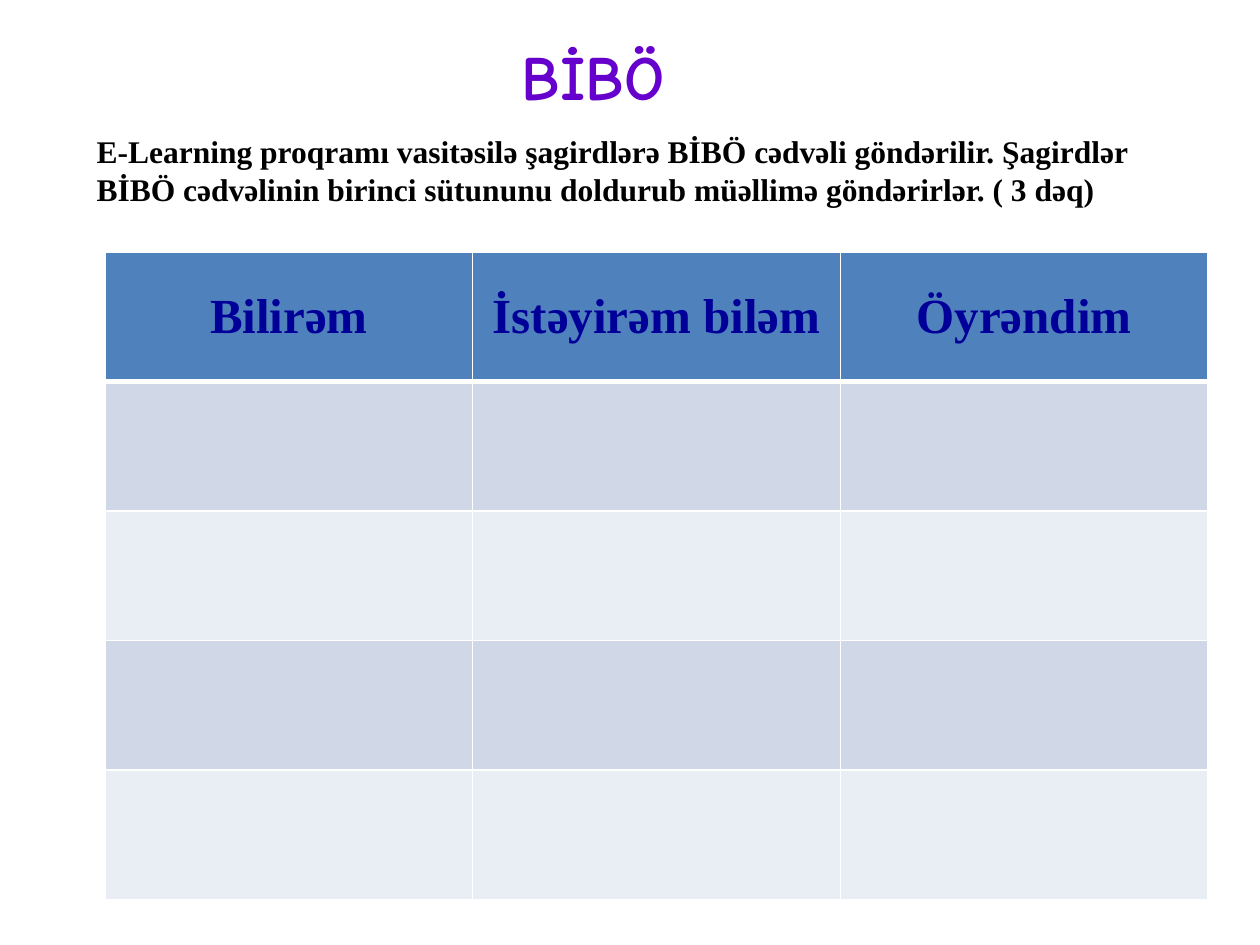
from dataclasses import dataclass

from lxml import etree
from pptx import Presentation
from pptx.dml.color import RGBColor
from pptx.enum.text import MSO_ANCHOR, PP_ALIGN
from pptx.oxml.ns import qn
from pptx.util import Cm, Pt

LEFT, CENTER = PP_ALIGN.LEFT, PP_ALIGN.CENTER
MIDDLE = MSO_ANCHOR.MIDDLE

WHITE = RGBColor(0xFF, 0xFF, 0xFF)
BLACK = RGBColor(0, 0, 0)
PURPLE = RGBColor(0x66, 0x00, 0xCC)
NAVY = RGBColor(0x00, 0x00, 0x99)
HEADER_BLUE = RGBColor(0x4F, 0x81, 0xBD)
BANDS = (RGBColor(0xD0, 0xD8, 0xE8), RGBColor(0xE9, 0xED, 0xF4))

HEADINGS = ("Bilirəm", "İstəyirəm biləm", "Öyrəndim")
ROWS = 5
COL_WIDTH, ROW_HEIGHT = Cm(7.41), Cm(2.61)


@dataclass
class Style:
    font: str
    size: int
    color: RGBColor
    align: PP_ALIGN


@dataclass
class Label:
    text: str
    left: float
    top: float
    width: float
    height: float
    wrap: bool
    style: Style


HEADING_STYLE = Style("Times New Roman", 28, NAVY, CENTER)
LABELS = (
    Label("E-Learning proqramı vasitəsilə şagirdlərə BİBÖ cədvəli göndərilir. "
          "Şagirdlər BİBÖ cədvəlinin birinci sütununu doldurub müəllimə "
          "göndərirlər. ( 3 dəq)",
          1.7, 2.54, 22.86, 2.57, True,
          Style("Times New Roman", 18, BLACK, LEFT)),
    Label("BİBÖ", 7.19, 0.64, 9.53, 1.47, False,
          Style("Comic Neue", 36, PURPLE, CENTER)),
)


def write(tf, text: str, style: Style) -> None:
    tf.text = text
    p = tf.paragraphs[0]
    p.alignment = style.align
    font = p.runs[0].font
    font.name = style.font
    font.size = Pt(style.size)
    font.bold = True
    font.color.rgb = style.color


def add_label(s, label: Label) -> None:
    sp = s.shapes.add_textbox(Cm(label.left), Cm(label.top),
                              Cm(label.width), Cm(label.height))
    sp.text_frame.word_wrap = label.wrap
    write(sp.text_frame, label.text, label.style)


def set_borders(cell, bottom: int) -> None:
    tc_pr = cell._tc.get_or_add_tcPr()
    widths = {"a:lnL": 1, "a:lnR": 1, "a:lnT": 1, "a:lnB": bottom}
    for i, (tag, width) in enumerate(widths.items()):
        ln = etree.Element(qn(tag), w=str(Pt(width)))
        fill = etree.SubElement(ln, qn("a:solidFill"))
        etree.SubElement(fill, qn("a:srgbClr"), val=str(WHITE))
        tc_pr.insert(i, ln)


def add_grid(s) -> None:
    cols = len(HEADINGS)
    table = s.shapes.add_table(ROWS, cols, Cm(2.12), Cm(5.08),
                               COL_WIDTH * cols, ROW_HEIGHT * ROWS).table
    for col in table.columns:
        col.width = COL_WIDTH
    for i, row in enumerate(table.rows):
        row.height = ROW_HEIGHT
        for cell in row.cells:
            cell.fill.solid()
            cell.fill.fore_color.rgb = BANDS[(i - 1) % 2] if i else HEADER_BLUE
            set_borders(cell, 1 if i else 3)
    for cell, heading in zip(table.rows[0].cells, HEADINGS):
        cell.vertical_anchor = MIDDLE
        write(cell.text_frame, heading, HEADING_STYLE)


def main() -> None:
    prs = Presentation()
    prs.slide_width, prs.slide_height = Cm(25.4), Cm(19.05)
    s = prs.slides.add_slide(prs.slide_layouts[6])
    intro, title = LABELS
    add_label(s, intro)
    add_grid(s)
    add_label(s, title)
    prs.save("out.pptx")


if __name__ == "__main__":
    main()
